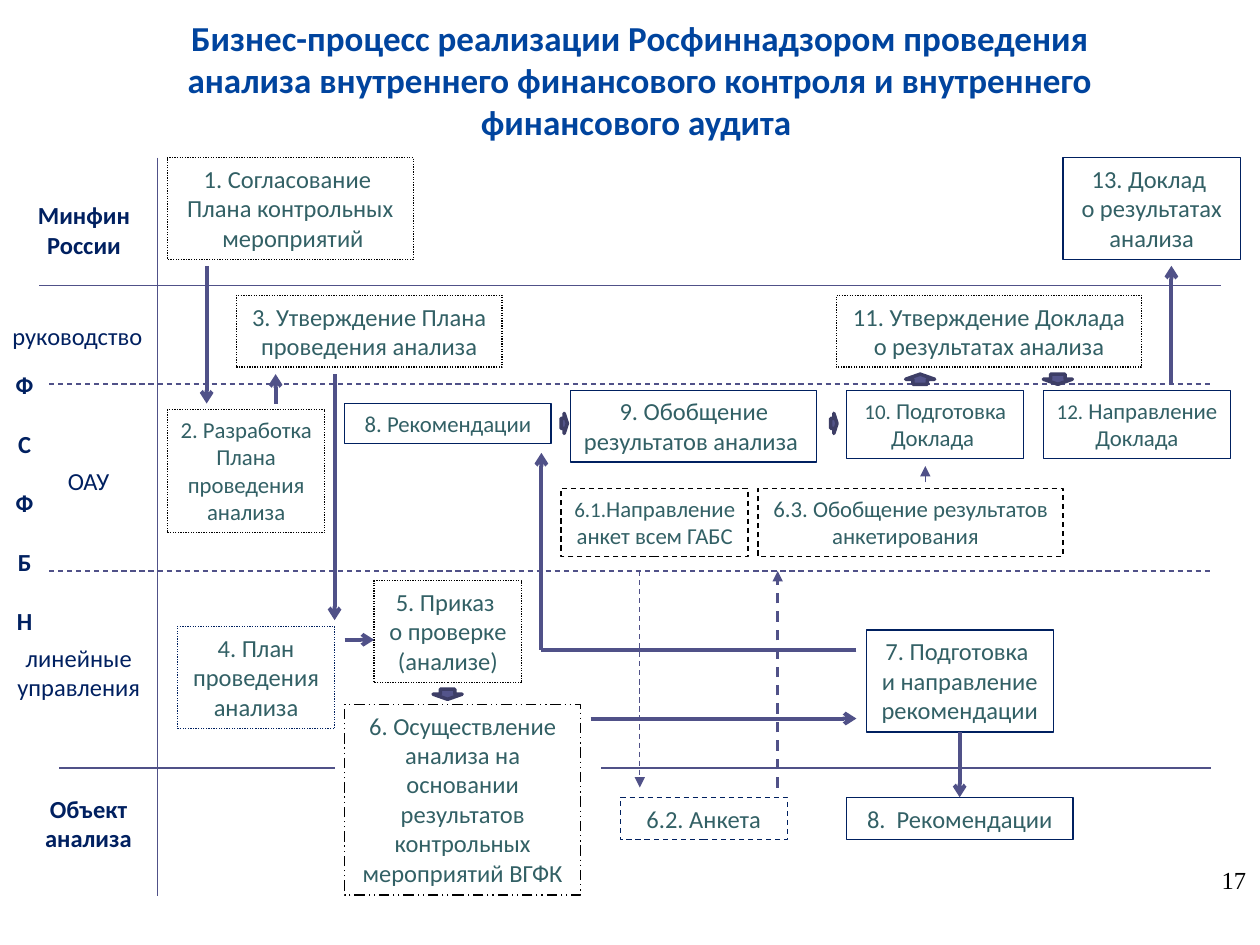
from lxml.etree import SubElement
from pptx import Presentation
from pptx.dml.color import RGBColor
from pptx.enum.dml import MSO_LINE
from pptx.enum.shapes import MSO_CONNECTOR, MSO_SHAPE
from pptx.enum.text import MSO_ANCHOR, PP_ALIGN
from pptx.oxml.ns import qn
from pptx.util import Pt

BLACK = RGBColor(0x00, 0x00, 0x00)
BLUE = RGBColor(0x00, 0x44, 0x9E)
NAVY = RGBColor(0x00, 0x20, 0x60)
TEAL = RGBColor(0x32, 0x60, 0x65)
VIOLET = RGBColor(0x50, 0x51, 0x88)
ARROW_FILL = RGBColor(0x53, 0x54, 0x8A)
ARROW_EDGE = RGBColor(0x3D, 0x3E, 0x66)

DOT, DASH = MSO_LINE.ROUND_DOT, MSO_LINE.DASH
DOWN, RIGHT = MSO_SHAPE.DOWN_ARROW, MSO_SHAPE.RIGHT_ARROW


def write(tf, text, size=14, color=NAVY, bold=False, font="Calibri",
          align=PP_ALIGN.CENTER, gap=0, lead="", lead_size=12):
    """Fill a frame: one paragraph per line, with an optional smaller lead."""
    tf.word_wrap = True
    tf.vertical_anchor = MSO_ANCHOR.TOP
    for i, line in enumerate(text.split("\n")):
        p = tf.paragraphs[0] if i == 0 else tf.add_paragraph()
        p.alignment = align
        if i and gap:
            p.space_before = Pt(gap)
        runs = [(line, size)]
        if i == 0 and lead:
            runs.insert(0, (lead, lead_size))
        for words, points in runs:
            r = p.add_run()
            r.text = words
            r.font.name = font
            r.font.size = Pt(points)
            r.font.bold = bold
            r.font.color.rgb = color


def add_label(s, x, y, w, h, text, **fmt):
    sp = s.shapes.add_textbox(Pt(x), Pt(y), Pt(w), Pt(h))
    write(sp.text_frame, text, **fmt)


def add_step(s, x, y, w, h, text, edge=NAVY, dash=None, **fmt):
    sp = s.shapes.add_shape(MSO_SHAPE.RECTANGLE, Pt(x), Pt(y), Pt(w), Pt(h))
    sp.shadow.inherit = False
    sp.fill.background()
    sp.line.color.rgb = edge
    sp.line.width = Pt(0.75)
    if dash is not None:
        sp.line.dash_style = dash
    write(sp.text_frame, text, color=TEAL, **fmt)


def add_line(s, x1, y1, x2, y2, width=0.75, dash=None, head=None):
    sp = s.shapes.add_connector(MSO_CONNECTOR.STRAIGHT,
                                Pt(x1), Pt(y1), Pt(x2), Pt(y2))
    sp.line.color.rgb = VIOLET
    sp.line.width = Pt(width)
    if dash is not None:
        sp.line.dash_style = dash
    if head:
        SubElement(sp.line._get_or_add_ln(), qn("a:tailEnd"), type=head)
    SubElement(sp._element.spPr, qn("a:effectLst"))


def add_block_arrow(s, kind, x, y, rotation=0):
    w, h = (16.6, 5.8) if kind == DOWN else (3.6, 11.5)
    sp = s.shapes.add_shape(kind, Pt(x), Pt(y), Pt(w), Pt(h))
    sp.shadow.inherit = False
    sp.rotation = rotation
    sp.fill.solid()
    sp.fill.fore_color.rgb = ARROW_FILL
    sp.line.color.rgb = ARROW_EDGE
    sp.line.width = Pt(2)


def add_lanes(s):
    # Lane separators
    add_line(s, 90, 90, 90, 512)
    add_line(s, 22.5, 163.3, 697.5, 163.3)
    for x1, x2 in ((33.8, 191.3), (343.5, 692)):
        add_line(s, x1, 438.8, x2, 438.8)
    for y in (219.4, 326.3):
        add_line(s, 28.1, y, 691.9, y, dash=DASH)

    # Lane names
    add_label(s, 11.3, 111, 73.4, 41, "Минфин России", bold=True)
    add_label(s, 0, 208, 28.1, 160, "Ф\nС\nФ\nБ\nН", bold=True, gap=16.8)
    add_label(s, 11.3, 450, 78.5, 41, "Объект анализа", bold=True)
    add_label(s, 0, 180, 90, 24.5, "руководство", align=PP_ALIGN.LEFT)
    add_label(s, 22.5, 263, 56.2, 24.5, "ОАУ")
    add_label(s, 0, 363.8, 90, 41, "линейные управления")


def add_steps(s):
    dotted = dict(edge=BLACK, dash=DOT)
    dashed = dict(edge=BLACK, dash=DASH)

    # Ministry of finance
    add_step(s, 95.6, 90, 140.6, 58.3,
             "1. Согласование \nПлана контрольных\n мероприятий", **dotted)
    add_step(s, 607.5, 90, 101.3, 58.3, "13. Доклад \nо результатах анализа")

    # Management
    add_step(s, 135, 168.8, 151.9, 41,
             "3. Утверждение Плана проведения анализа", **dotted)
    add_step(s, 478, 168.8, 174.4, 41,
             "11. Утверждение Доклада о результатах анализа", **dotted)

    # Analysis department
    add_step(s, 95.6, 234, 90, 70.5,
             "2. Разработка Плана проведения анализа", size=13, **dotted)
    add_step(s, 196.9, 230.6, 118.1, 23, "8. Рекомендации", size=13)
    add_step(s, 326.2, 223, 140.6, 41, "9. Обобщение результатов анализа ")
    add_step(s, 483.8, 223, 101.3, 39, " Подготовка Доклада ",
             size=13, lead="10.")
    add_step(s, 596.2, 223, 106.9, 39, " Направление Доклада",
             size=13, lead="12.")
    add_step(s, 320.6, 279, 106.9, 39, "Направление анкет всем ГАБС",
             size=13, lead="6.1.", **dashed)
    add_step(s, 433.1, 279, 174.4, 39,
             "6.3. Обобщение результатов анкетирования  ", size=13, **dashed)

    # Line departments
    add_step(s, 101.3, 358, 90, 58.3, "4. План проведения анализа", dash=DOT)
    add_step(s, 213.8, 331.9, 84.4, 58.3,
             "5. Приказ \nо проверке (анализе)", **dotted)
    add_step(s, 196.9, 402.5, 135, 109,
             "6. Осуществление анализа на основании результатов "
             "контрольных мероприятий ВГФК",
             edge=BLACK, dash=MSO_LINE.DASH_DOT_DOT)
    add_step(s, 495, 360, 106.9, 58.3,
             "7. Подготовка \nи направление рекомендации")

    # Object of analysis
    add_step(s, 354.4, 455.6, 95.6, 24.3, "6.2. Анкета", dash=DASH)
    add_step(s, 483.8, 455.6, 129.4, 24.3, "8.  Рекомендации")


def add_flows(s):
    # Main flow
    for ends in ((118.1, 151.9, 118.1, 230.6), (157.5, 230.6, 157.5, 213.8),
                 (191.2, 213.8, 191.2, 354.4), (196.9, 365.6, 213.8, 365.6),
                 (337.5, 410.6, 489.4, 410.6), (548.4, 418.3, 548.4, 455.6),
                 (309.4, 371.3, 309.4, 258.8), (669.4, 219.4, 669.4, 151.9)):
        add_line(s, *ends, width=2.25, head="arrow")
    add_line(s, 489.4, 371.3, 309.4, 371.3, width=2.25)

    # Questionnaire flow
    add_line(s, 365.6, 326.3, 365.6, 450, dash=DASH, head="triangle")
    add_line(s, 444.4, 450, 444.4, 326.3, width=1.5, dash=DASH,
             head="triangle")
    add_line(s, 528.8, 275.6, 528.8, 266.3, head="triangle")

    # Short links between neighbouring steps
    add_block_arrow(s, DOWN, 247.5, 393.8)
    add_block_arrow(s, RIGHT, 320.6, 236.2)
    add_block_arrow(s, RIGHT, 474.7, 236.2)
    add_block_arrow(s, DOWN, 517.5, 213.8, rotation=180)
    add_block_arrow(s, DOWN, 596.2, 213.8)


def main():
    prs = Presentation()
    prs.slide_width, prs.slide_height = Pt(720), Pt(540)
    s = prs.slides.add_slide(prs.slide_layouts[6])

    # Title
    add_label(s, 90, 5.8, 551.5, 80,
              "Бизнес-процесс реализации Росфиннадзором проведения анализа "
              "внутреннего финансового контроля и внутреннего финансового "
              "аудита ", size=20, color=BLUE, bold=True)
    add_lanes(s)
    add_steps(s)
    add_flows(s)

    # Page number
    add_label(s, 685.4, 491, 33.8, 37.5, "17", color=BLACK,
              font="Times New Roman", align=PP_ALIGN.RIGHT)
    prs.save("out.pptx")


if __name__ == "__main__":
    main()
